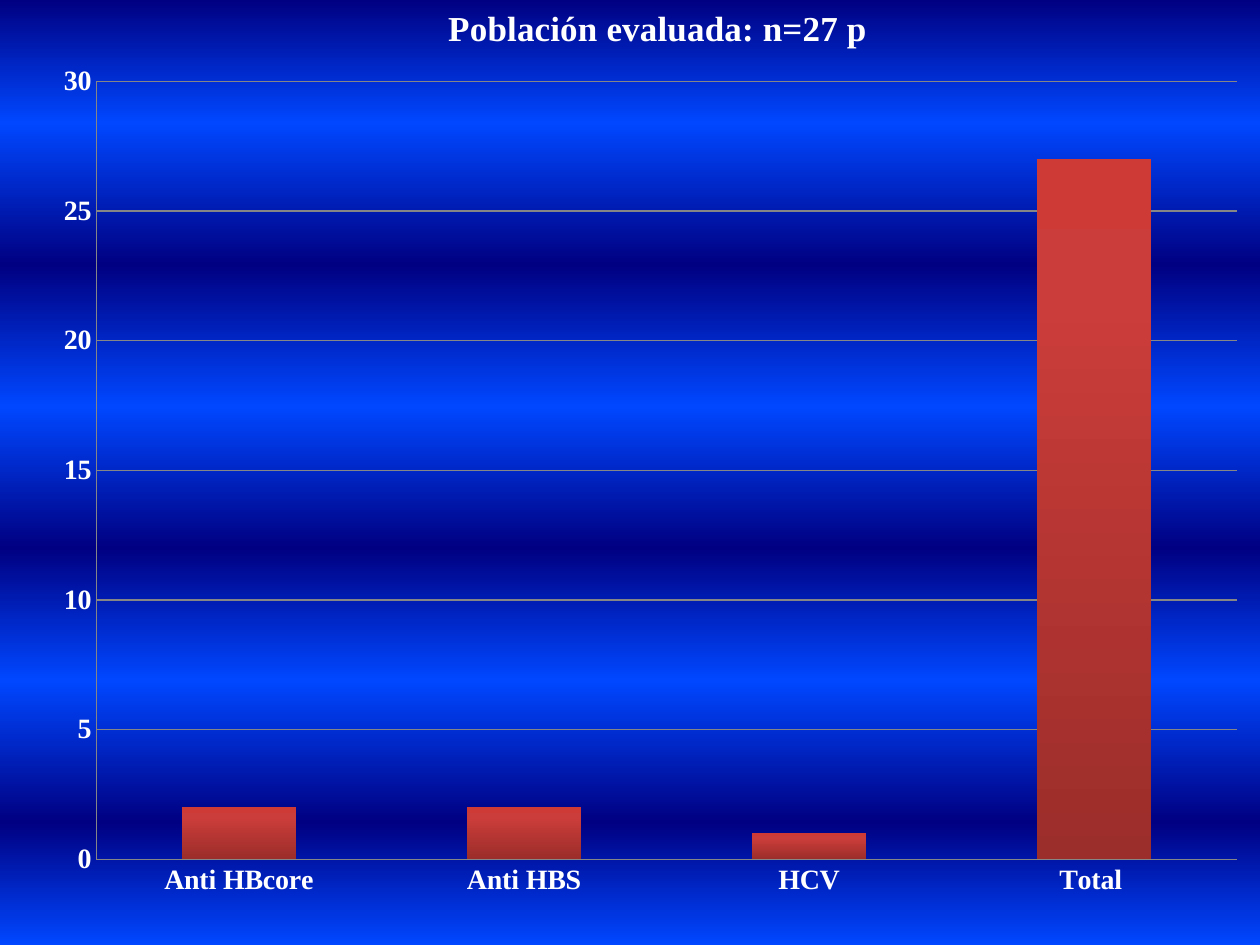
import pptx
import pptx.chart.data
import pptx.dml.color
import pptx.enum.chart
import pptx.oxml
import pptx.oxml.ns
import pptx.util
from pptx.util import Inches

FACE = "Times New Roman"
WHITE, GRAY = "FFFFFF", "868686"
NAVY, BLUE = "000082", "0047FF"
SKY = list(zip((0, 13, 28, 43, 58, 72, 87, 100), (NAVY, BLUE) * 4))
REDS = [(0, "9B2D2A"), (80, "CB3D3A"), (100, "CE3B37")]
DATA = {"Anti HBcore": 2, "Anti HBS": 2, "HCV": 1, "Total ": 27}


def color(code):
    return pptx.dml.color.RGBColor.from_string(code)


def shade(fill, stops, angle):
    """Fill with any number of gradient stops, angle in clockwise degrees."""
    fill.gradient()
    grad = fill._fill._gradFill
    for child in list(grad):
        grad.remove(child)
    marks = "".join(
        f'<a:gs pos="{spot * 1000}"><a:srgbClr val="{code}"/></a:gs>'
        for spot, code in stops
    )
    part = pptx.oxml.parse_xml(
        f'<a:gradFill {pptx.oxml.ns.nsdecls("a")}><a:gsLst>{marks}</a:gsLst>'
        f'<a:lin ang="{angle * 60000}" scaled="0"/></a:gradFill>'
    )
    grad.extend(list(part))


def style(font, size):
    font.name, font.size, font.bold = FACE, pptx.util.Pt(size), True
    font.color.rgb = color(WHITE)


def place(node, index, target="", **spots):
    """Give a chart part a manual layout, in shares of the chart."""
    for old in node.findall(pptx.oxml.ns.qn("c:layout")):
        node.remove(old)
    modes = "".join(f'<c:{k}Mode val="edge"/>' for k in "xy")
    sizes = "".join(f'<c:{k} val="{v}"/>' for k, v in spots.items())
    node.insert(index, pptx.oxml.parse_xml(
        f'<c:layout {pptx.oxml.ns.nsdecls("c")}><c:manualLayout>'
        f'{target}{modes}{sizes}</c:manualLayout></c:layout>'
    ))


def add_bars(slide, left, top, width, height):
    kinds = pptx.enum.chart
    data = pptx.chart.data.CategoryChartData()
    data.categories = list(DATA)
    data.add_series("Series 1", list(DATA.values()))
    chart = slide.shapes.add_chart(
        kinds.XL_CHART_TYPE.COLUMN_CLUSTERED, left, top, width, height, data
    ).chart
    chart.has_legend = False
    chart.font.name, chart.font.size = "Calibri", pptx.util.Pt(10)
    chart.font.color.rgb = color(WHITE)

    chart.has_title = True
    title = chart.chart_title
    line = title.text_frame.paragraphs[0]
    line.text = "Población evaluada: n=27 p"
    style(line.font, 20)
    title.include_in_layout = False
    place(title._element, 1, x=0.33, y=0.03)

    for axis in (chart.category_axis, chart.value_axis):
        axis.major_tick_mark = axis.minor_tick_mark = kinds.XL_TICK_MARK.NONE
        axis.format.line.color.rgb = color(GRAY)
        style(axis.tick_labels.font, 16)
    scale = chart.value_axis
    scale.minimum_scale, scale.maximum_scale, scale.major_unit = 0, 30, 5
    scale.has_major_gridlines = True
    scale.major_gridlines.format.line.color.rgb = color(GRAY)

    plot = chart.plots[0]
    plot.gap_width, plot.vary_by_categories = 150, False
    shade(plot.series[0].format.fill, REDS, 270)
    place(chart._chartSpace.chart.plotArea, 0,
          '<c:layoutTarget val="inner"/>', x=0.047, y=0.117, w=0.934, h=0.823)


def main():
    deck = pptx.Presentation()
    deck.slide_width, deck.slide_height = Inches(10), Inches(7.5)
    slide = deck.slides.add_slide(deck.slide_layouts[6])
    shade(slide.background.fill, SKY, 90)
    add_bars(slide, Inches(0.31), Inches(-0.23), Inches(9.69), Inches(7.5))
    deck.save("out.pptx")


if __name__ == "__main__":
    main()
